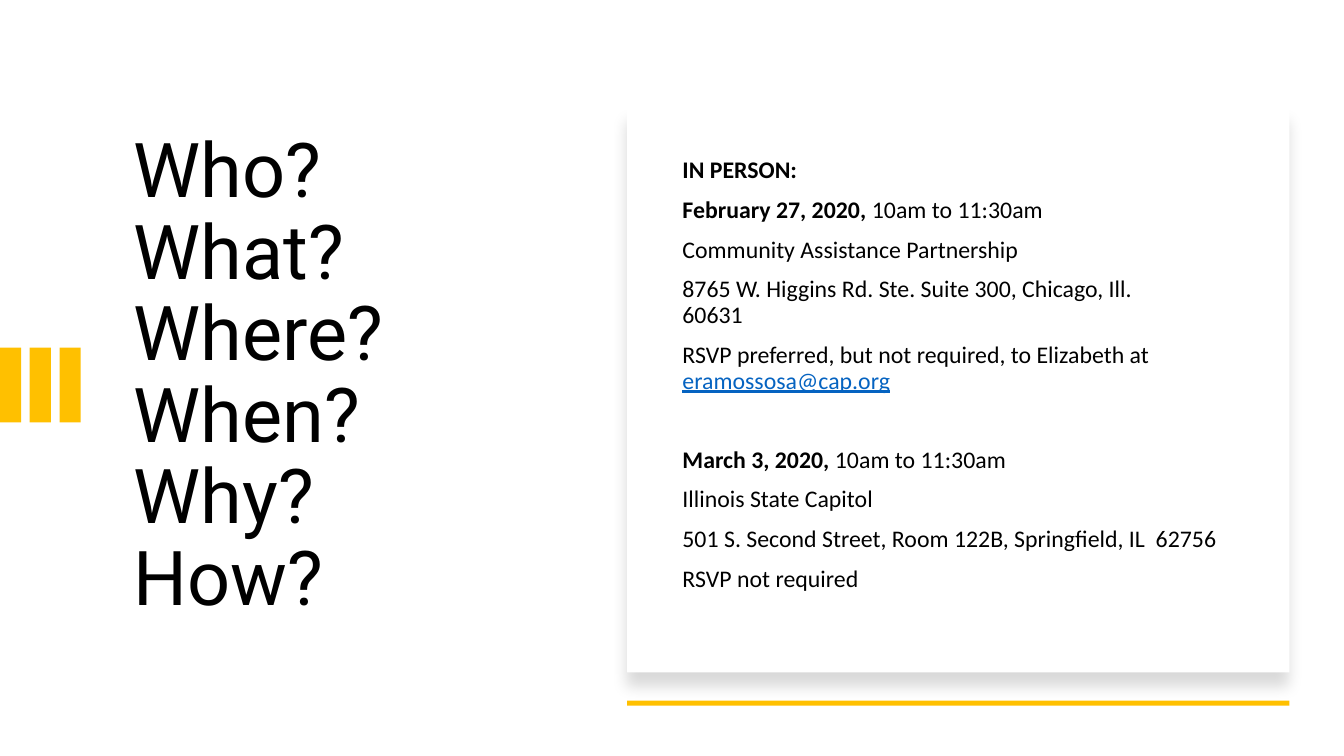
from lxml.etree import SubElement
from pptx import Presentation
from pptx.dml.color import RGBColor
from pptx.enum.shapes import MSO_SHAPE as Shape
from pptx.enum.text import MSO_ANCHOR as Anchor
from pptx.oxml.ns import qn
from pptx.util import Inches, Pt

QUESTIONS = ["Who?", "What?", "Where?", "When?", "Why?", "How?"]
TIME = ("10am to 11:30am", "plain")
MEETINGS = [
    [
        [("IN PERSON:", "bold")],
        [("February 27, 2020, ", "bold"), TIME],
        [("Community Assistance Partnership", "plain")],
        [("8765 W. Higgins Rd. Ste. Suite 300, Chicago, Ill.\v60631", "plain")],
        [("RSVP preferred, but not required, to Elizabeth at ", "plain"),
         ("eramossosa@cap.org", "link")],
    ],
    [
        [("March 3, 2020, ", "bold"), TIME],
        [("Illinois State Capitol", "plain")],
        [("501 S. Second Street, Room 122B, Springfield, IL  62756", "plain")],
        [("RSVP not required", "plain")],
    ],
]

BLACK = RGBColor(0x00, 0x00, 0x00)
WHITE = RGBColor(0xFF, 0xFF, 0xFF)
GOLD = RGBColor(0xFF, 0xC0, 0x00)
LINK_BLUE = RGBColor(0x05, 0x63, 0xC1)

LINE_SPACING = 0.9
PARA_GAP, MEETING_GAP = Pt(10), Pt(38)
CARD_LEFT, CARD_WIDTH = 6.22, 6.57
BAR_COUNT, BAR_WIDTH, BAR_PITCH = 3, 0.21, 0.295


def add_block(shapes, left, top, width, height, color):
    block = shapes.add_shape(Shape.RECTANGLE, *map(Inches, (left, top, width, height)))
    block.shadow.inherit = False
    block.fill.solid()
    block.fill.fore_color.rgb = color
    block.line.fill.background()
    return block


def add_soft_shadow(block):
    effects = block.element.spPr.find(qn("a:effectLst"))
    shadow = SubElement(effects, qn("a:outerShdw"), blurRad=str(Pt(11)),
                        dist=str(Pt(10)), dir="5400000", algn="t", rotWithShape="0")
    color = SubElement(shadow, qn("a:srgbClr"), val=str(BLACK))
    SubElement(color, qn("a:alpha"), val="15000")


def add_text_frame(page, left, top, width, height, anchor):
    box = page.shapes.add_textbox(*map(Inches, (left, top, width, height)))
    frame = box.text_frame
    frame.word_wrap = True
    frame.vertical_anchor = anchor
    return frame


def add_title(page):
    frame = add_text_frame(page, 1.23, 0.8, 4.26, 5.88, Anchor.MIDDLE)
    para = frame.paragraphs[0]
    para.text = "\v".join(QUESTIONS)
    para.line_spacing = LINE_SPACING
    for span in para.runs:
        span.font.name = "Roboto"
        span.font.size = Pt(54)
        span.font.color.rgb = BLACK


def fill_para(para, pieces, gap):
    para.line_spacing = LINE_SPACING
    para.space_before = gap
    para.font.name = "Calibri"
    para.font.size = Pt(17)
    for text, style in pieces:
        lines = text.split("\v")
        for index, line in enumerate(lines):
            if index:
                para.add_line_break()
            span = para.add_run()
            span.text = line
            span.font.name = "Calibri"
            span.font.size = Pt(17)
            span.font.bold = style == "bold"
            span.font.underline = style == "link"
            span.font.color.rgb = LINK_BLUE if style == "link" else BLACK


def add_meetings(page):
    frame = add_text_frame(page, 6.67, 1.52, 5.71, 4.71, Anchor.TOP)
    for number, meeting in enumerate(MEETINGS):
        for row, pieces in enumerate(meeting):
            first = number == row == 0
            para = frame.paragraphs[0] if first else frame.add_paragraph()
            gap = Pt(0) if first else PARA_GAP if row else MEETING_GAP
            fill_para(para, pieces, gap)


def main():
    deck = Presentation()
    deck.slide_width, deck.slide_height = Inches(13.33), Inches(7.5)
    page = deck.slides.add_slide(deck.slide_layouts[6])
    add_title(page)
    bars = page.shapes.add_group_shape()
    for index in range(BAR_COUNT):
        add_block(bars.shapes, index * BAR_PITCH, 3.45, BAR_WIDTH, 0.74, GOLD)
    card = add_block(page.shapes, CARD_LEFT, 1.07, CARD_WIDTH, 5.6, WHITE)
    add_soft_shadow(card)
    add_meetings(page)
    add_block(page.shapes, CARD_LEFT, 6.95, CARD_WIDTH, 0.05, GOLD)
    deck.save("out.pptx")


if __name__ == "__main__":
    main()
